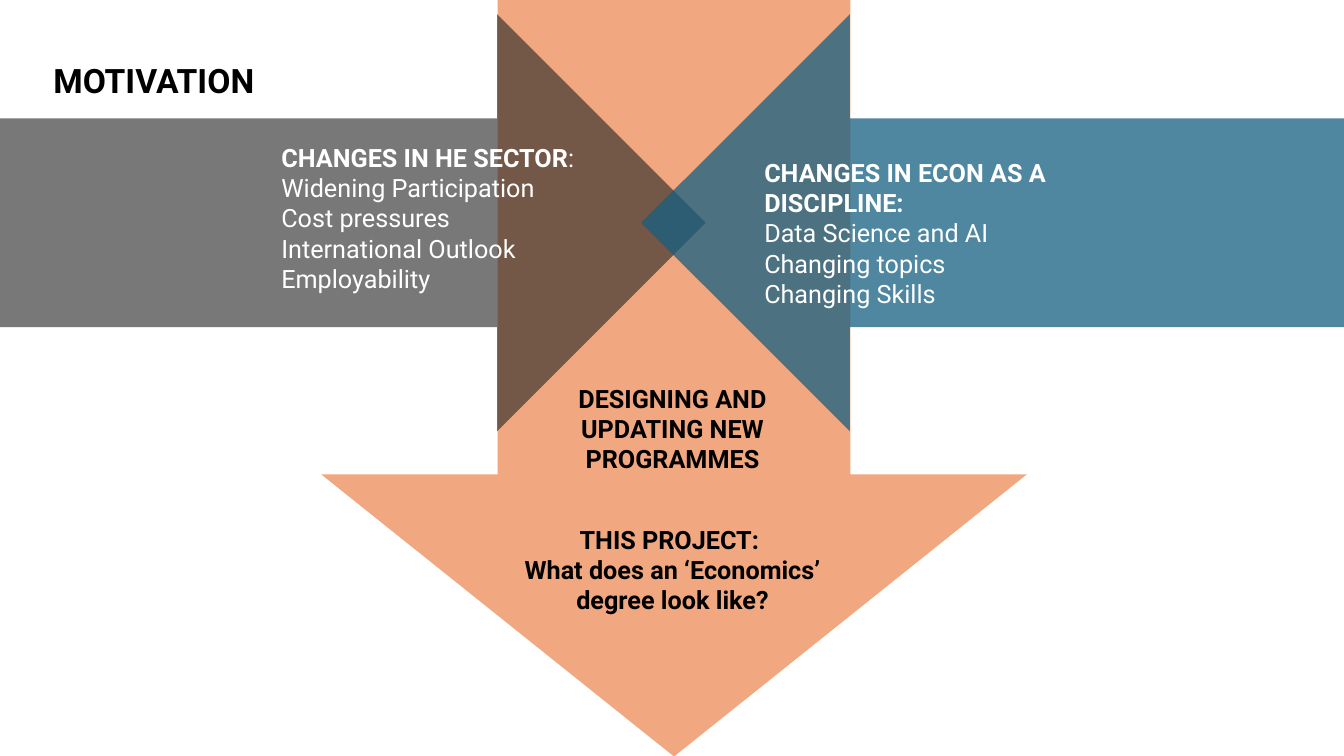
from lxml.etree import SubElement
from pptx import Presentation
from pptx.dml.color import RGBColor
from pptx.enum.shapes import MSO_SHAPE
from pptx.enum.text import MSO_ANCHOR, MSO_AUTO_SIZE, PP_ALIGN
from pptx.oxml.ns import qn
from pptx.util import Inches, Pt

BLACK = RGBColor(0x00, 0x00, 0x00)
WHITE = RGBColor(0xFF, 0xFF, 0xFF)
ORANGE = RGBColor(0xE9, 0x71, 0x32)
GREY = RGBColor(0x26, 0x26, 0x26)
BLUE = RGBColor(0x15, 0x60, 0x82)


def add_arrow(slide, left, top, width, height, rotation, color, alpha):
    sp = slide.shapes.add_shape(MSO_SHAPE.RIGHT_ARROW, Inches(left), Inches(top),
                                Inches(width), Inches(height))
    sp.rotation = rotation
    sp.shadow.inherit = False
    sp.line.fill.background()
    sp.fill.solid()
    sp.fill.fore_color.rgb = color
    clr = sp.fill._xPr.find(qn("a:solidFill"))[0]
    SubElement(clr, qn("a:alpha")).set("val", str(alpha * 1000))
    return sp


def write_text(sp, box, lines, size, color, align, bold_lines):
    sp.left, sp.top, sp.width, sp.height = [Inches(v) for v in box]
    tf = sp.text_frame
    tf.word_wrap = True
    tf.auto_size = MSO_AUTO_SIZE.NONE
    tf.vertical_anchor = MSO_ANCHOR.TOP
    tf.text = "\n".join(lines)
    for i, p in enumerate(tf.paragraphs):
        p.alignment = align
        p.space_before = Pt(0)
        pPr = p._p.get_or_add_pPr()
        pPr.set("marL", "0")
        pPr.set("indent", "0")
        SubElement(pPr, qn("a:buNone"))
        font = p.runs[0].font
        font.name, font.size, font.bold = "Roboto", Pt(size), i < bold_lines
        font.color.rgb = color
    return tf


prs = Presentation()
prs.slide_width, prs.slide_height = Inches(13.33), Inches(7.5)
slide = prs.slides.add_slide(prs.slide_layouts[3])
title, he_list, econ_list = slide.placeholders

# Title
write_text(title, (0.43, 0.54, 6.11, 0.5), ["MOTIVATION"], 24, BLACK, PP_ALIGN.LEFT, 1)

# Downward arrow with the resulting project
down = add_arrow(slide, 2.86, 0.18, 7.65, 7, 90, ORANGE, 62)
down.adjustments[1] = 0.4
for box, lines in [
    ((5.35, 3.75, 2.64, 1.01), ["DESIGNING AND UPDATING NEW PROGRAMMES"]),
    ((4.92, 5.15, 3.5, 1.01), ["THIS PROJECT: ", "What does an ‘Economics’ degree look like?"]),
]:
    tb = slide.shapes.add_textbox(0, 0, 0, 0)
    write_text(tb, box, lines, 18, BLACK, PP_ALIGN.CENTER, len(lines))

# Side arrows, each with its list in front
for left, rotation, color, alpha, sp, box, lines in [
    (0, 0, GREY, 62, he_list, (2.69, 1.36, 3.61, 1.92),
     ["CHANGES IN HE SECTOR", "Widening Participation", "Cost pressures",
      "International Outlook", "Employability"]),
    (6.36, 180, BLUE, 75, econ_list, (7.48, 1.51, 4.4, 1.62),
     ["CHANGES IN ECON AS A DISCIPLINE:", "Data Science and AI",
      "Changing topics", "Changing Skills"]),
]:
    add_arrow(slide, left, 0.14, 7, 4.14, rotation, color, alpha)
    write_text(sp, box, lines, 18, WHITE, PP_ALIGN.LEFT, 1)
    slide.shapes._spTree.append(sp._element)

# Regular-weight colon after the first list heading
r = he_list.text_frame.paragraphs[0].add_run()
r.text = ":"
r.font.name, r.font.size, r.font.bold = "Roboto", Pt(18), False
r.font.color.rgb = WHITE

prs.save("out.pptx")
